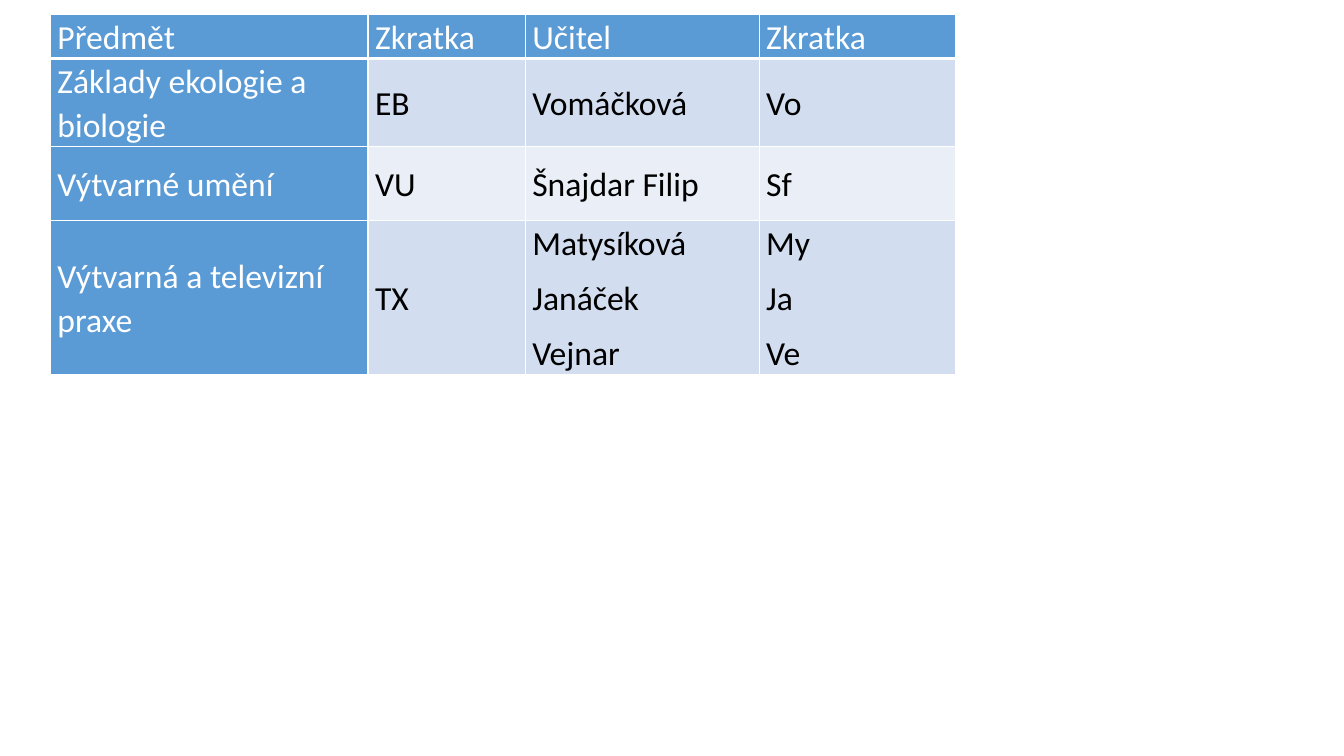
import pptx
import pptx.dml.color
import pptx.enum.text
import pptx.oxml
import pptx.oxml.ns
import pptx.util

FONT = "Calibri"
WHITE, BLACK, BLUE = "FFFFFF", "000000", "5B9BD5"
BANDS = ["D2DEEF", "EAEFF7"]

TABLE_BOX = (0.5, 0.14, 8.98, 3.57)
COLUMN_WEIGHTS = [3.15, 1.56, 2.32, 1.95]
ROW_WEIGHTS = [0.44, 0.87, 0.74, 1.52]
SUBJECT_ROWS = [
    ["Předmět", "Zkratka", "Učitel", "Zkratka"],
    ["Základy ekologie a biologie", "EB", "Vomáčková", "Vo"],
    ["Výtvarné umění", "VU", "Šnajdar Filip", "Sf"],
    ["Výtvarná a televizní praxe", "TX", "Matysíková\nJanáček\nVejnar", "My\nJa\nVe"],
]


def color(hex_value):
    return pptx.dml.color.RGBColor.from_string(hex_value)


def set_borders(cell, bottom_width):
    """Draw white lines on all four sides; they precede the fill in the cell XML."""
    properties = cell._tc.get_or_add_tcPr()
    widths = {"lnL": 1, "lnR": 1, "lnT": 1, "lnB": bottom_width}
    for position, (side, width) in enumerate(widths.items()):
        properties.insert(position, pptx.oxml.parse_xml(
            f'<a:{side} {pptx.oxml.ns.nsdecls("a")} w="{pptx.util.Pt(width)}">'
            f'<a:solidFill><a:srgbClr val="{WHITE}"/></a:solidFill></a:{side}>'))


def format_cell(cell, text, fill, text_color, bottom_width):
    cell.fill.solid()
    cell.fill.fore_color.rgb = color(fill)
    set_borders(cell, bottom_width)
    cell.vertical_anchor = pptx.enum.text.MSO_ANCHOR.MIDDLE
    cell.margin_left = cell.margin_right = pptx.util.Inches(0.07)
    cell.margin_top = cell.margin_bottom = 0
    cell.text_frame.text = text
    for paragraph in cell.text_frame.paragraphs:
        paragraph.line_spacing = 1.07
        paragraph.space_after = pptx.util.Pt(8)
        for run in paragraph.runs:
            run.font.name = FONT
            run.font.size = pptx.util.Pt(24)
            run.font.bold = False
            run.font.color.rgb = color(text_color)


def add_subject_table(slide, box):
    left, top, width, height = [pptx.util.Inches(length) for length in box]
    table = slide.shapes.add_table(
        len(ROW_WEIGHTS), len(COLUMN_WEIGHTS), left, top, width, height).table

    # Share the box among columns and rows
    for column, weight in zip(table.columns, COLUMN_WEIGHTS):
        column.width = int(width * weight / sum(COLUMN_WEIGHTS))
    for row, weight in zip(table.rows, ROW_WEIGHTS):
        row.height = int(height * weight / sum(ROW_WEIGHTS))

    # Blue header row and first column, banded body
    for row_index, texts in enumerate(SUBJECT_ROWS):
        for column_index, text in enumerate(texts):
            is_heading = row_index == 0 or column_index == 0
            format_cell(
                table.cell(row_index, column_index), text,
                fill=BLUE if is_heading else BANDS[(row_index - 1) % 2],
                text_color=WHITE if is_heading else BLACK,
                bottom_width=3 if row_index == 0 else 1)


def main():
    presentation = pptx.Presentation()
    presentation.slide_width = pptx.util.Inches(13.33)
    presentation.slide_height = pptx.util.Inches(7.5)
    slide = presentation.slides.add_slide(presentation.slide_layouts[6])
    add_subject_table(slide, TABLE_BOX)
    presentation.save("out.pptx")


if __name__ == "__main__":
    main()
